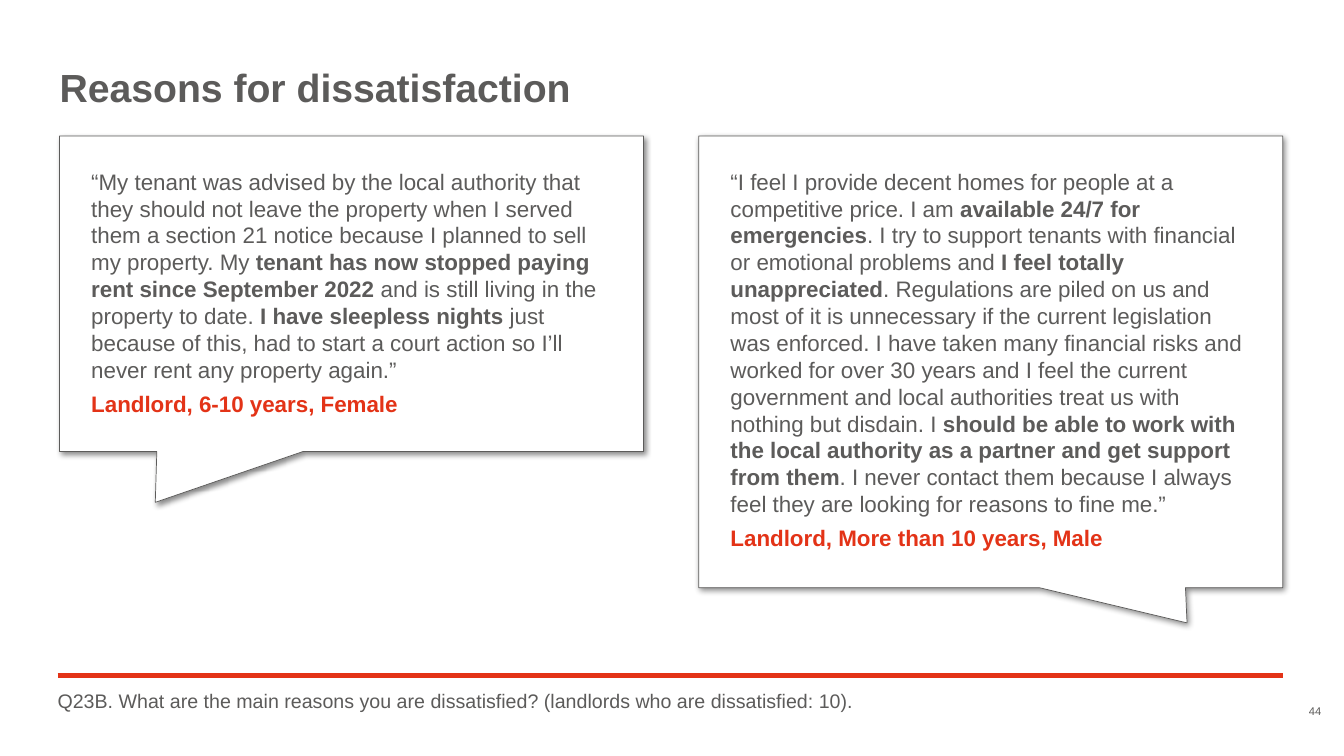
from lxml.etree import SubElement
from pptx import Presentation
from pptx.dml.color import RGBColor
from pptx.enum.shapes import MSO_CONNECTOR, MSO_SHAPE
from pptx.enum.text import MSO_ANCHOR, MSO_AUTO_SIZE, PP_ALIGN
from pptx.oxml.ns import qn
from pptx.util import Cm, Pt

GREY = RGBColor(0x5C, 0x5B, 0x5A)
RED = RGBColor(0xE3, 0x33, 0x17)
WHITE = RGBColor(0xFF, 0xFF, 0xFF)

LEFT, RIGHT = 1.5, 32.33
CALLOUT_TOP, CALLOUT_WIDTH, CALLOUT_INSET = 3.43, 14.72, 0.8

# Each quote: left, height, pointer, runs of (text, bold), speaker
QUOTES = [
    (LEFT, 7.95, (-0.336, 0.661), [
        ("“My tenant was advised by the local authority that they should not leave the property "
         "when I served them a section 21 notice because I planned to sell my property. My ", False),
        ("tenant has now stopped paying rent since September 2022 ", True),
        ("and is still living in the property to date. ", False),
        ("I have sleepless nights", True),
        (" just because of this, had to start a court action so I’ll never rent any property "
         "again.”", False),
    ], "Landlord, 6-10 years, Female"),
    (RIGHT - CALLOUT_WIDTH, 11.38, (0.336, 0.578), [
        ("“I feel I provide decent homes for people at a competitive price. I am ", False),
        ("available 24/7 for emergencies", True),
        (". I try to support tenants with financial or emotional problems and ", False),
        ("I feel totally unappreciated", True),
        (". Regulations are piled on us and most of it is unnecessary if the current legislation "
         "was enforced. I have taken many financial risks and worked for over 30 years and I feel "
         "the current government and local authorities treat us with nothing but disdain. I ", False),
        ("should be able to work with the local authority as a partner and get support from them",
         True),
        (". I never contact them because I always feel they are looking for reasons to fine me.”",
         False),
    ], "Landlord, More than 10 years, Male"),
]


def set_values(target, values):
    for name, value in values.items():
        setattr(target, name, value)


def place(shape, left, top, width, height):
    set_values(shape, {"left": Cm(left), "top": Cm(top), "width": Cm(width), "height": Cm(height)})


def set_frame(shape, anchor, inset=0):
    frame = shape.text_frame
    set_values(frame, {"word_wrap": True, "auto_size": MSO_AUTO_SIZE.NONE,
                       "vertical_anchor": anchor})
    for side in ("left", "top", "right", "bottom"):
        setattr(frame, f"margin_{side}", Cm(inset))
    return frame


def add_run(paragraph, text, size, bold=False, color=GREY):
    run = paragraph.add_run()
    run.text = text
    set_values(run.font, {"name": "Arial", "size": Pt(size), "bold": bold})
    run.font.color.rgb = color


def fill_line(shape, box, anchor, text, size, bold=False, **paragraph_format):
    """Place a shape and give it a single line of text."""
    place(shape, *box)
    paragraph = set_frame(shape, anchor).paragraphs[0]
    set_values(paragraph, paragraph_format)
    add_run(paragraph, text, size, bold)
    return paragraph


def remove_bullet(paragraph):
    properties = paragraph._p.get_or_add_pPr()
    properties.set("marL", "0")
    properties.set("indent", "0")
    SubElement(properties, qn("a:buNone"))


def add_shadow(shape):
    effects = SubElement(shape._element.spPr, qn("a:effectLst"))
    shadow = SubElement(effects, qn("a:outerShdw"), blurRad="50800", dist="25400",
                        dir="2700000", algn="tl", rotWithShape="0")
    color = SubElement(shadow, qn("a:srgbClr"), val="000000")
    SubElement(color, qn("a:alpha"), val="45000")


def add_quote(slide, left, height, pointer, runs, speaker):
    callout = slide.shapes.add_shape(MSO_SHAPE.RECTANGULAR_CALLOUT, Cm(left), Cm(CALLOUT_TOP),
                                     Cm(CALLOUT_WIDTH), Cm(height))
    callout.adjustments[0], callout.adjustments[1] = pointer
    callout.fill.solid()
    callout.fill.fore_color.rgb = WHITE
    callout.line.color.rgb = GREY
    callout.line.width = Pt(0.5)
    add_shadow(callout)

    frame = set_frame(callout, MSO_ANCHOR.TOP, CALLOUT_INSET)
    quote, source = frame.paragraphs[0], frame.add_paragraph()
    for paragraph in (quote, source):
        set_values(paragraph, {"alignment": PP_ALIGN.LEFT, "space_after": Pt(5)})
    for text, bold in runs:
        add_run(quote, text, 16, bold)
    add_run(source, speaker, 16, True, RED)


def add_rule(slide, left, right, top):
    rule = slide.shapes.add_connector(MSO_CONNECTOR.STRAIGHT, Cm(left), Cm(top),
                                      Cm(right), Cm(top))
    rule.line.color.rgb = RED
    rule.line.width = Pt(3)
    SubElement(rule._element.spPr, qn("a:effectLst"))


def main():
    presentation = Presentation()
    set_values(presentation, {"slide_width": Cm(33.87), "slide_height": Cm(19.05)})
    slide = presentation.slides.add_slide(presentation.slide_layouts[1])
    title, question = slide.placeholders

    # Heading
    fill_line(title, (LEFT, 1.52, RIGHT - LEFT, 1.47), MSO_ANCHOR.MIDDLE,
              "Reasons for dissatisfaction", 28, True,
              alignment=PP_ALIGN.LEFT, line_spacing=0.9)

    # Quotes
    for quote in QUOTES:
        add_quote(slide, *quote)

    # Footer: rule, survey question, page number
    add_rule(slide, 1.45, RIGHT, 17.02)
    paragraph = fill_line(
        question, (1.45, 17.42, 30.89, 0.81), MSO_ANCHOR.TOP,
        "Q23B. What are the main reasons you are dissatisfied? "
        "(landlords who are dissatisfied: 10).", 14,
        alignment=PP_ALIGN.LEFT, line_spacing=0.9, space_before=Pt(10))
    remove_bullet(paragraph)
    page_number = slide.shapes.add_textbox(0, 0, 0, 0)
    fill_line(page_number, (32.3, 17.75, 1, 0.33), MSO_ANCHOR.BOTTOM, "44", 8,
              alignment=PP_ALIGN.RIGHT)

    presentation.save("out.pptx")


if __name__ == "__main__":
    main()
